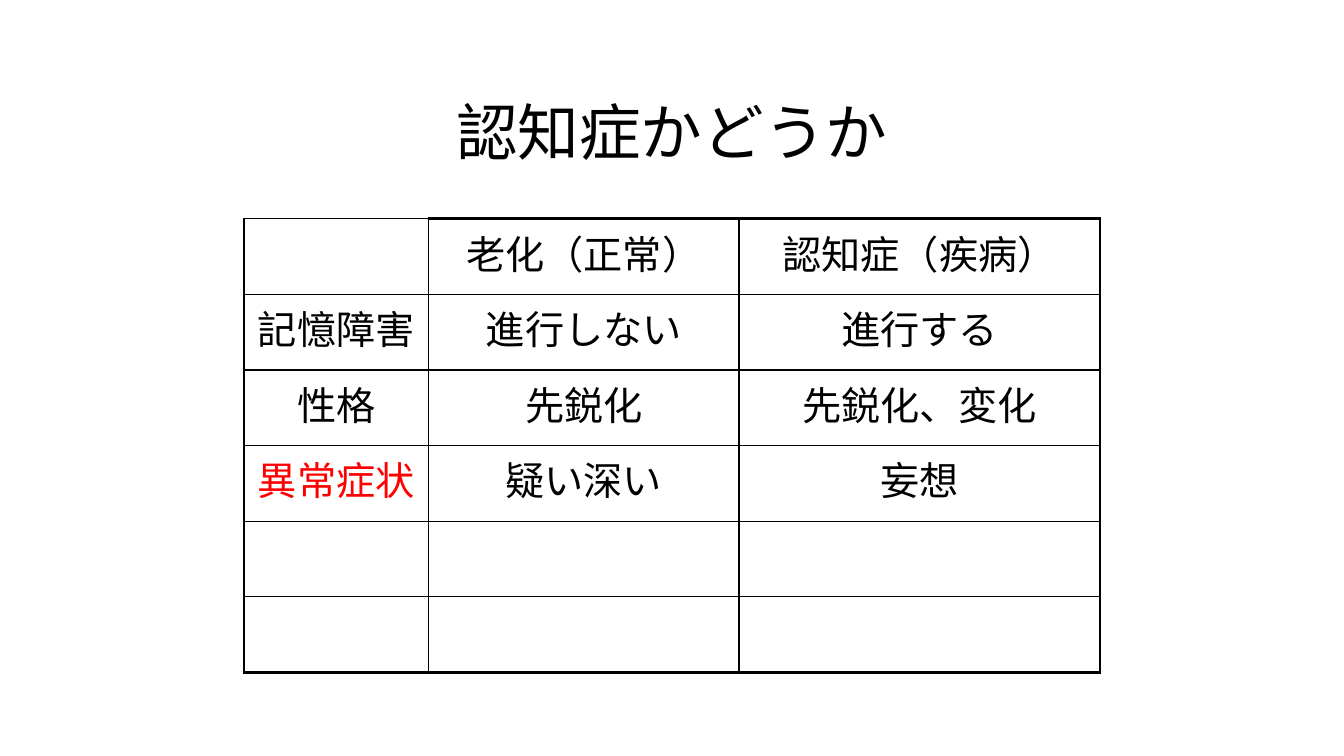
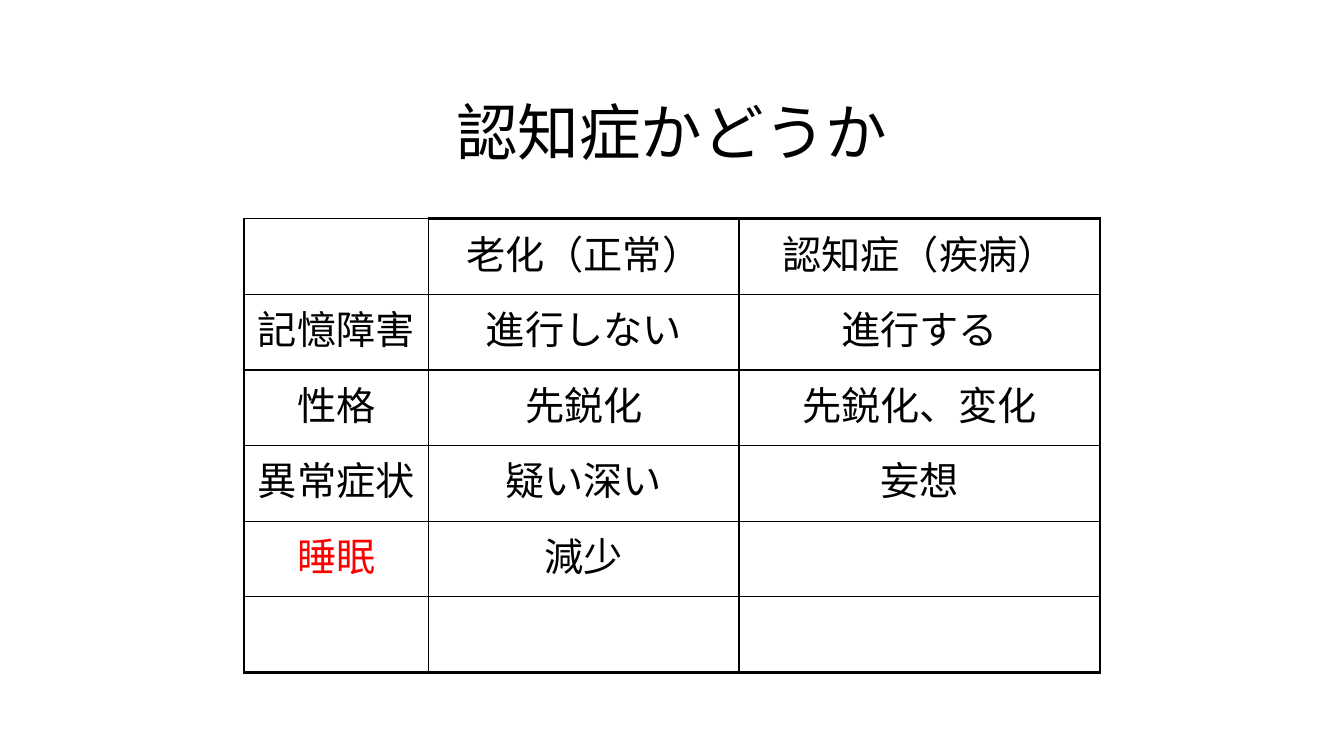
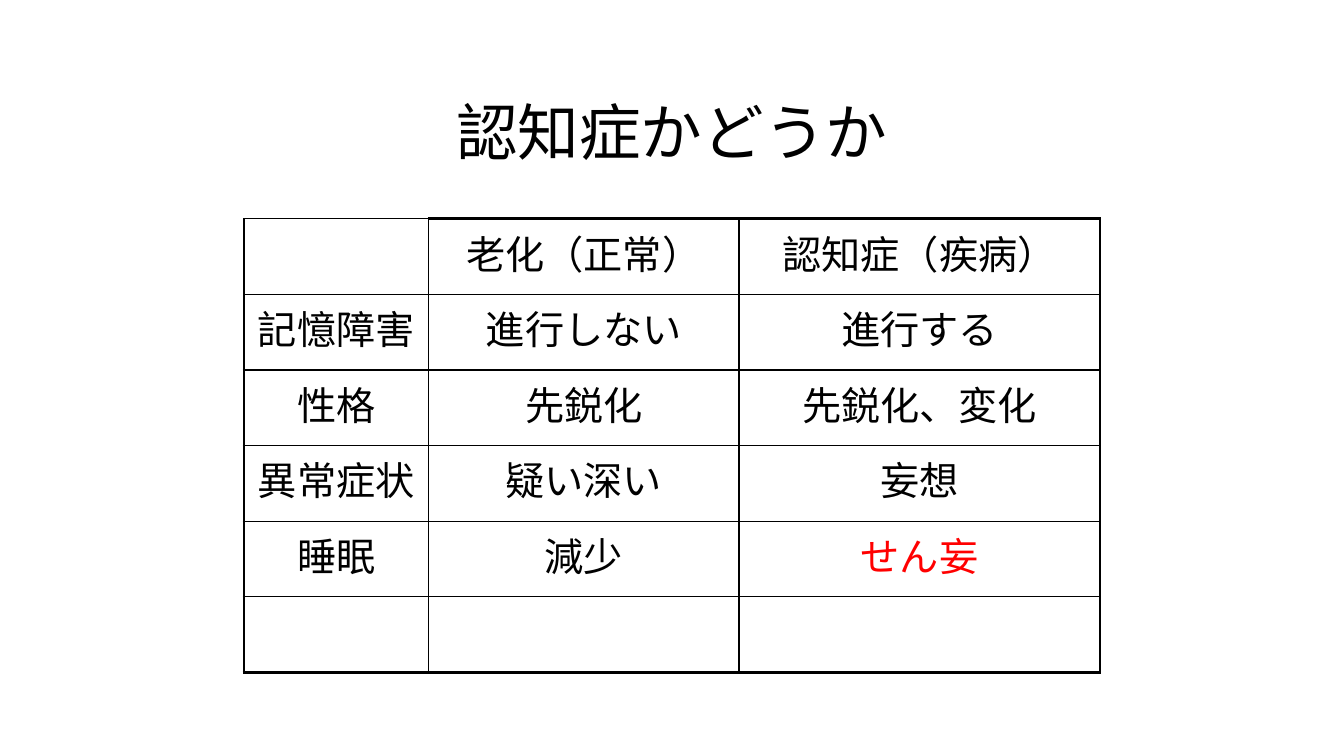
from dataclasses import dataclass

from lxml import etree
from pptx import Presentation
from pptx.dml.color import RGBColor
from pptx.enum.text import MSO_ANCHOR, MSO_AUTO_SIZE, PP_ALIGN
from pptx.oxml.ns import qn
from pptx.util import Inches, Pt

CENTER = PP_ALIGN.CENTER
MIDDLE = MSO_ANCHOR.MIDDLE
NO_AUTOFIT = MSO_AUTO_SIZE.NONE
TITLE_ONLY = 5


@dataclass(frozen=True)
class Theme:
    """Colours, font, type sizes and line widths."""
    ink: str = "000000"
    accent: str = "FF0000"
    font: str = "Times New Roman"
    title_size: int = 44
    cell_size: int = 28
    thin: float = 1
    heavy: float = 2.25
    space_before: int = 20


class Deck:
    """Holds the theme and the current slide."""

    def __init__(self, theme):
        """Open an empty widescreen presentation."""
        self.theme = theme
        self.presentation = Presentation()
        self.presentation.slide_width = Inches(13.33)
        self.presentation.slide_height = Inches(7.5)
        self.slide = None

    def add_text(self, paragraph, text, size, color):
        """Add one centred run to a paragraph."""
        paragraph.alignment = CENTER
        run = paragraph.add_run()
        run.text = text
        run.font.name = self.theme.font
        run.font.size = Pt(size)
        run.font.color.rgb = RGBColor.from_string(color)

    def add_slide(self, heading):
        """Start a slide with its title."""
        layout = self.presentation.slide_layouts[TITLE_ONLY]
        self.slide = self.presentation.slides.add_slide(layout)
        title = self.slide.shapes.title
        title.left, title.top = Inches(1), Inches(0.67)
        title.width, title.height = Inches(11.33), Inches(1.25)
        frame = title.text_frame
        frame.vertical_anchor = MIDDLE
        frame.auto_size = NO_AUTOFIT
        self.add_text(frame.paragraphs[0], heading, self.theme.title_size, self.theme.ink)

    def set_borders(self, cell, heavy_sides):
        """Rule all four sides of a cell, the named ones heavily."""
        properties = cell._tc.get_or_add_tcPr()
        for side in "LRTB":
            width = self.theme.heavy if side in heavy_sides else self.theme.thin
            line = etree.SubElement(properties, qn(f"a:ln{side}"), w=str(Pt(width)))
            fill = etree.SubElement(line, qn("a:solidFill"))
            etree.SubElement(fill, qn("a:srgbClr"), val=self.theme.ink)

    def set_space_before(self, paragraph):
        """Give a paragraph its proportional space before."""
        properties = paragraph._p.get_or_add_pPr()
        spacing = etree.SubElement(properties, qn("a:spcBef"))
        percent = str(self.theme.space_before * 1000)
        etree.SubElement(spacing, qn("a:spcPct"), val=percent)

    def add_comparison(self, rows, column_widths, highlight):
        """Add the ruled table with one highlighted entry."""
        last_row, last_column = len(rows) - 1, len(column_widths) - 1
        table = self.slide.shapes.add_table(
            len(rows), len(column_widths), Inches(2.42), Inches(2.17),
            Inches(sum(column_widths)), Inches(0.75 * len(rows))).table
        table.first_row = table.horz_banding = False
        for column, width in zip(table.columns, column_widths):
            column.width = Inches(width)
        for r, entries in enumerate(rows):
            for c, entry in enumerate(entries):
                cell = table.cell(r, c)
                edges = {"L": c == 0 and r > 0, "R": c == last_column,
                         "T": r == 0 and c > 0, "B": r == last_row}
                self.set_borders(cell, [side for side in edges if edges[side]])
                cell.fill.background()
                if entry:
                    color = self.theme.accent if entry == highlight else self.theme.ink
                    paragraph = cell.text_frame.paragraphs[0]
                    self.set_space_before(paragraph)
                    self.add_text(paragraph, entry, self.theme.cell_size, color)


def main():
    """Build the three steps of the comparison."""
    shared_rows = [
        ("", "老化（正常）", "認知症（疾病）"),
        ("記憶障害", "進行しない", "進行する"),
        ("性格", "先鋭化", "先鋭化、変化"),
        ("異常症状", "疑い深い", "妄想"),
    ]
    blank_row = ("", "", "")
    steps = [
        (blank_row, "異常症状"),
        (("睡眠", "減少", ""), "睡眠"),
        (("睡眠", "減少", "せん妄"), "せん妄"),
    ]
    deck = Deck(Theme())
    for sleep_row, highlight in steps:
        deck.add_slide("認知症かどうか")
        deck.add_comparison(shared_rows + [sleep_row, blank_row],
                            (1.83, 3.08, 3.58), highlight)
    deck.presentation.save("out.pptx")


if __name__ == "__main__":
    main()
